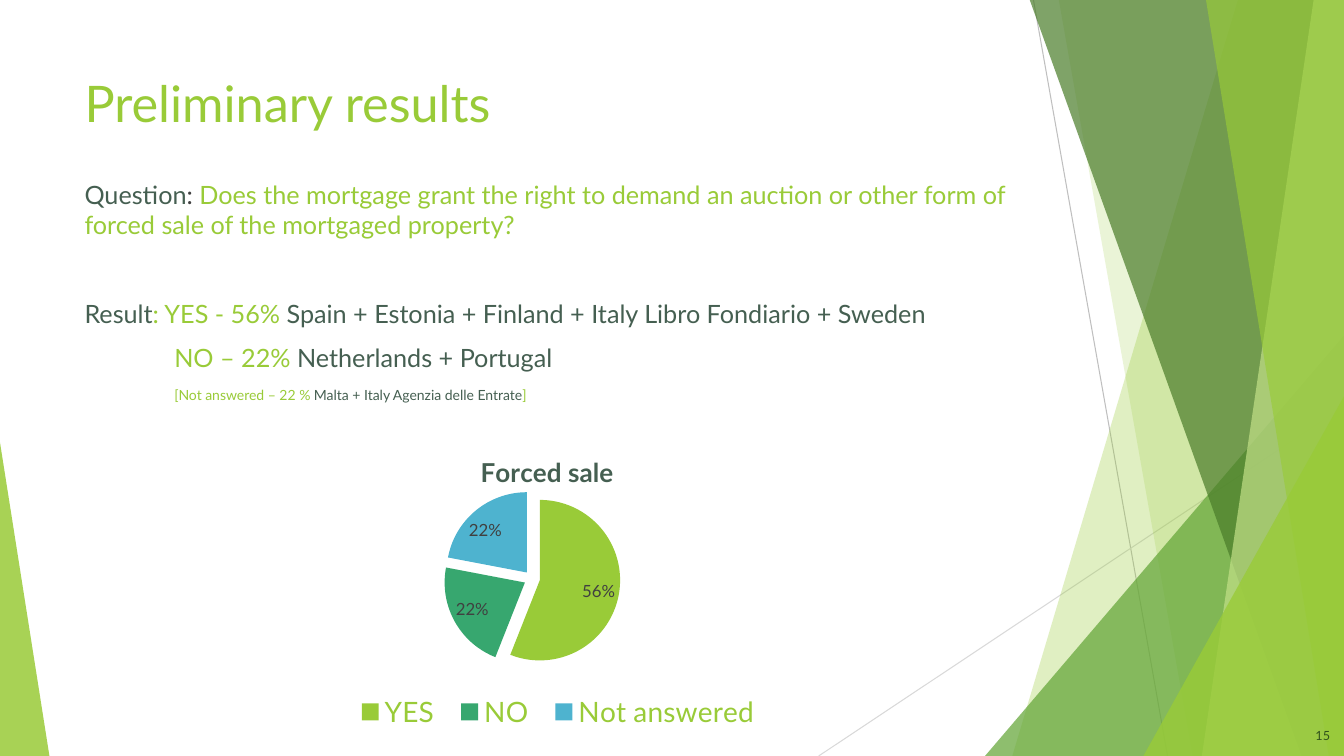
from lxml import etree
from pptx import Presentation
from pptx import util as u
from pptx.chart.data import CategoryChartData
from pptx.dml.color import RGBColor
from pptx.enum import chart as charts, shapes, text
from pptx.oxml import parse_xml
from pptx.oxml.ns import nsdecls, qn

PX = 9144  # 100 px to the inch
FONT = "Lato"
LIME, FOREST, GREY = "99CB38", "455F51", "404040"


def px(*lengths):
    return [u.Emu(length * PX) for length in lengths]


def rgb(code):
    return RGBColor.from_string(code)


def set_font(font, size, color, **values):
    for name, value in {"name": FONT, "size": u.Pt(size), **values}.items():
        setattr(font, name, value)
    font.color.rgb = rgb(color)


def paint(shape, color, opacity):
    """Fill a shape with a flat colour of the given opacity in percent."""
    shape.shadow.inherit = False
    shape.line.fill.background()
    shape.fill.solid()
    shape.fill.fore_color.rgb = rgb(color)
    tint = shape.fill._xPr.find(qn("a:solidFill"))[0]
    etree.SubElement(tint, qn("a:alpha")).set("val", str(opacity * 1000))


def add_line(slide, start, end, color):
    line = slide.shapes.add_connector(shapes.MSO_CONNECTOR.STRAIGHT, *px(*start, *end))
    line.line.color.rgb = rgb(color)
    line.line.width = u.Pt(0.75)
    etree.SubElement(line._element.spPr, qn("a:effectLst"))


def add_panel(slide, box, top_x, bottom_x, color, opacity):
    """Draw a sheet from a slanted left edge to the right side of the box."""
    left, top, width, height = box
    right, bottom = left + width, top + height
    outline = slide.shapes.build_freeform(left + top_x, top, scale=PX)
    outline.add_line_segments([(right, top), (right, bottom), (left + bottom_x, bottom)])
    paint(outline.convert_to_shape(), color, opacity)


def add_wedge(slide, box, width, height, peak, color, opacity):
    """Stand a triangle in the corner of the box below its peak (0 left, 1 right)."""
    left = box[0] + peak * (box[2] - width)
    top = box[1] + box[3] - height
    wedge = slide.shapes.add_shape(
        shapes.MSO_SHAPE.ISOSCELES_TRIANGLE, *px(left, top, width, height))
    wedge.adjustments[0] = peak
    paint(wedge, color, opacity)


def add_facets(slide, box):
    left, top, width, height = box
    right, bottom = left + width, top + height
    add_line(slide, (left + 213, top + 1), (left + 346, bottom), "BFBFBF")
    add_line(slide, (right, top + 404), (left, bottom), "D9D9D9")
    add_panel(slide, box, 416, 192, LIME, 30)
    add_panel(slide, box, 238, 371, LIME, 20)
    add_wedge(slide, box, 356, 417, 1, "63A537", 72)
    add_panel(slide, box, 209, 479, "4A7C29", 70)
    add_panel(slide, box, 491, 380, "C2E088", 70)
    add_panel(slide, box, 384, 506, LIME, 65)
    add_wedge(slide, box, 199, 357, 1, LIME, 80)


def add_text(slide, box, paragraphs):
    """Each paragraph is (paragraph format, margin and indent in px, spans)."""
    frame = slide.shapes.add_textbox(*px(*box)).text_frame
    frame.word_wrap = True
    for index, (values, (margin, indent), spans) in enumerate(paragraphs):
        para = frame.add_paragraph() if index else frame.paragraphs[0]
        for name, value in values.items():
            setattr(para, name, value)
        if margin or indent:
            properties = para._p.get_or_add_pPr()
            properties.set("marL", str(margin * PX))
            properties.set("indent", str(indent * PX))
        for words, size, color in spans:
            span = para.add_run()
            span.text = words
            set_font(span.font, size, color)
    return frame


def add_results(slide, box):
    gap = {"space_before": u.Pt(10)}
    wide_gap = {"space_before": u.Pt(41.6)}
    flush, step = (0, 0), 89
    add_text(slide, box, [
        ({}, flush, [
            ("Question", 18, FOREST), (": ", 18, GREY),
            ("Does the mortgage grant the right to demand an auction or other form of "
             "forced sale of the mortgaged property?", 18, LIME)]),
        (wide_gap, flush, [
            ("Result", 18, FOREST), (": YES - 56% ", 18, LIME),
            ("Spain + Estonia + Finland + Italy Libro Fondiario + Sweden", 18, FOREST)]),
        (gap, (0, step), [
            ("NO – 22% ", 18, LIME), ("Netherlands + Portugal", 18, FOREST)]),
        (gap, (step, 0), [
            ("[Not answered – 22 % ", 10, LIME),
            ("Malta + Italy Agenzia delle Entrate", 10, FOREST), ("]", 10, LIME)]),
    ])


def set_layout(element, index, **values):
    """Give a chart part a manual layout, as fractions of the chart."""
    for old in element.findall(qn("c:layout")):
        element.remove(old)
    layout = parse_xml(f"<c:layout {nsdecls('c')}><c:manualLayout/></c:layout>")
    for name, value in {**values}.items():
        etree.SubElement(layout[0], qn(f"c:{name}")).set("val", str(value))
    element.insert(index, layout)


def add_pie(slide, box):
    data = CategoryChartData()
    data.categories = ["YES", "NO", "Not answered "]
    data.add_series("Series 1", (56, 22, 22))
    chart = slide.shapes.add_chart(charts.XL_CHART_TYPE.PIE, *px(*box), data).chart
    set_font(chart.font, 10, "000000")
    edges = {"xMode": "edge", "yMode": "edge"}

    chart.has_title = True
    title = chart.chart_title
    title.text_frame.text = "Forced sale"
    set_font(title.text_frame.paragraphs[0].runs[0].font, 18.6, FOREST, bold=True)
    set_layout(title._element, 1, **edges, x=0.39, y=0.02)

    chart.has_legend = True
    chart.legend.position = charts.XL_LEGEND_POSITION.BOTTOM
    chart.legend.include_in_layout = False
    set_font(chart.legend.font, 20, LIME)
    set_layout(chart.legend._element, 1, **edges, x=0.19, y=0.83, w=0.66, h=0.14)

    plot = chart.plots[0]
    plot.vary_by_categories = True
    set_layout(plot._element.getparent(), 0, layoutTarget="inner", **edges,
               x=0, y=0.16, w=0.95, h=0.59)
    series = plot.series[0]
    for index, color in enumerate((LIME, "37A76F", "4EB3CF")):
        fill = series.points[index].format.fill
        fill.solid()
        fill.fore_color.rgb = rgb(color)
    explosion = parse_xml(f'<c:explosion {nsdecls("c")} val="10"/>')
    series._element.find(qn("c:dPt")).addprevious(explosion)

    labels = series.data_labels
    for name, value in {"show_percentage": True, "show_value": False,
                        "position": charts.XL_LABEL_POSITION.BEST_FIT}.items():
        setattr(labels, name, value)
    set_font(labels.font, 12, GREY)


def main():
    deck = Presentation()
    deck.slide_width, deck.slide_height = px(1333, 750)
    slide = deck.slides.add_slide(deck.slide_layouts[6])
    add_facets(slide, (812, -1, 521, 751))
    add_wedge(slide, (0, 0, 1333, 750), 49, 311, 0, LIME, 85)
    add_text(slide, (74, 67, 940, 75), [({}, (0, 0), [("Preliminary results", 36, LIME)])])
    add_results(slide, (74, 173, 974, 488))
    number = add_text(slide, (1254, 710, 75, 40), [
        ({"alignment": text.PP_ALIGN.RIGHT}, (0, 0), [("15", 9, "31521C")])])
    number.vertical_anchor = text.MSO_ANCHOR.MIDDLE
    add_pie(slide, (217, 439, 654, 297))
    deck.save("out.pptx")


if __name__ == "__main__":
    main()
